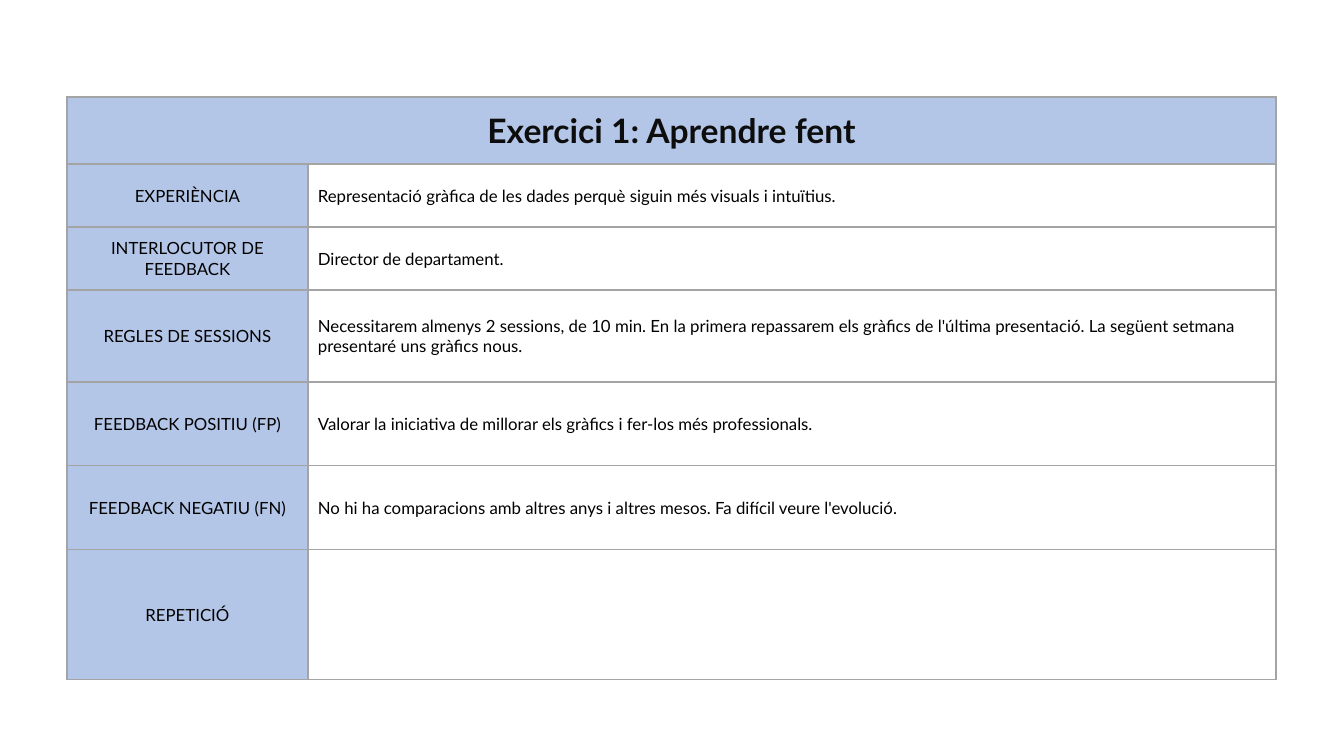
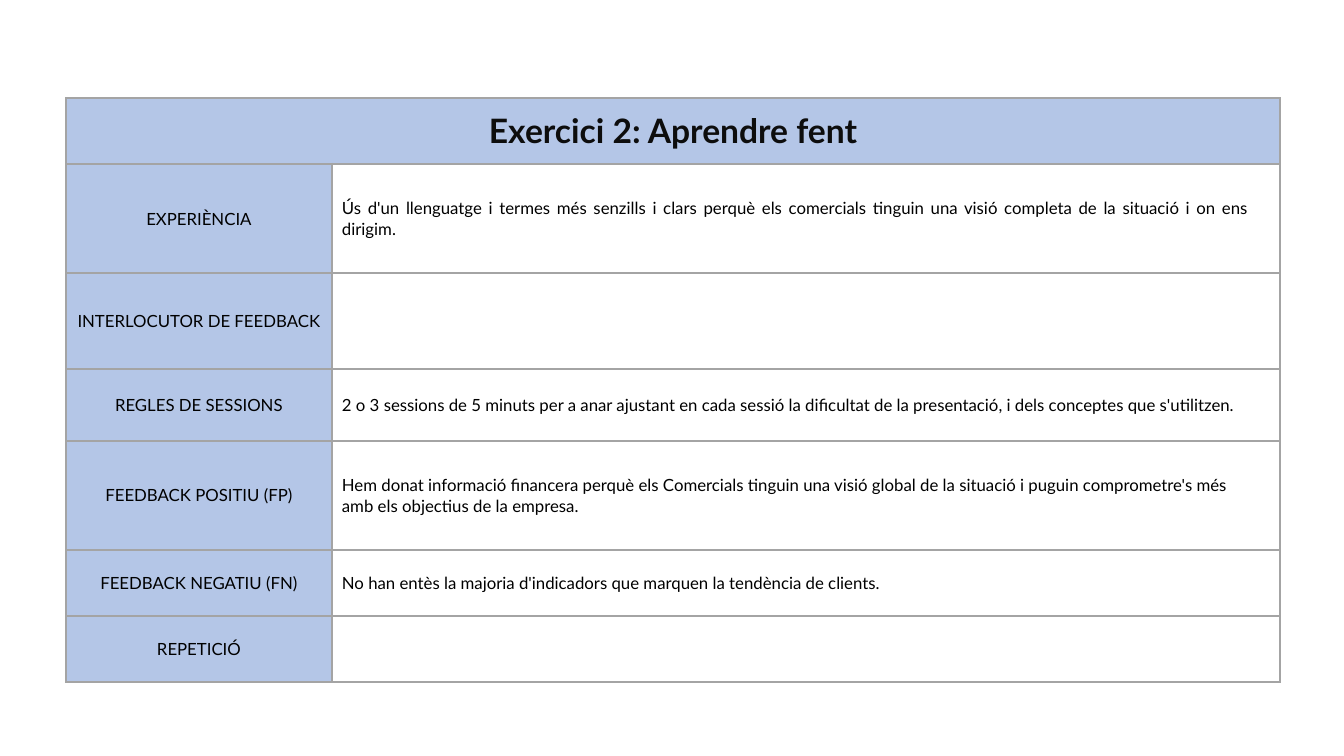
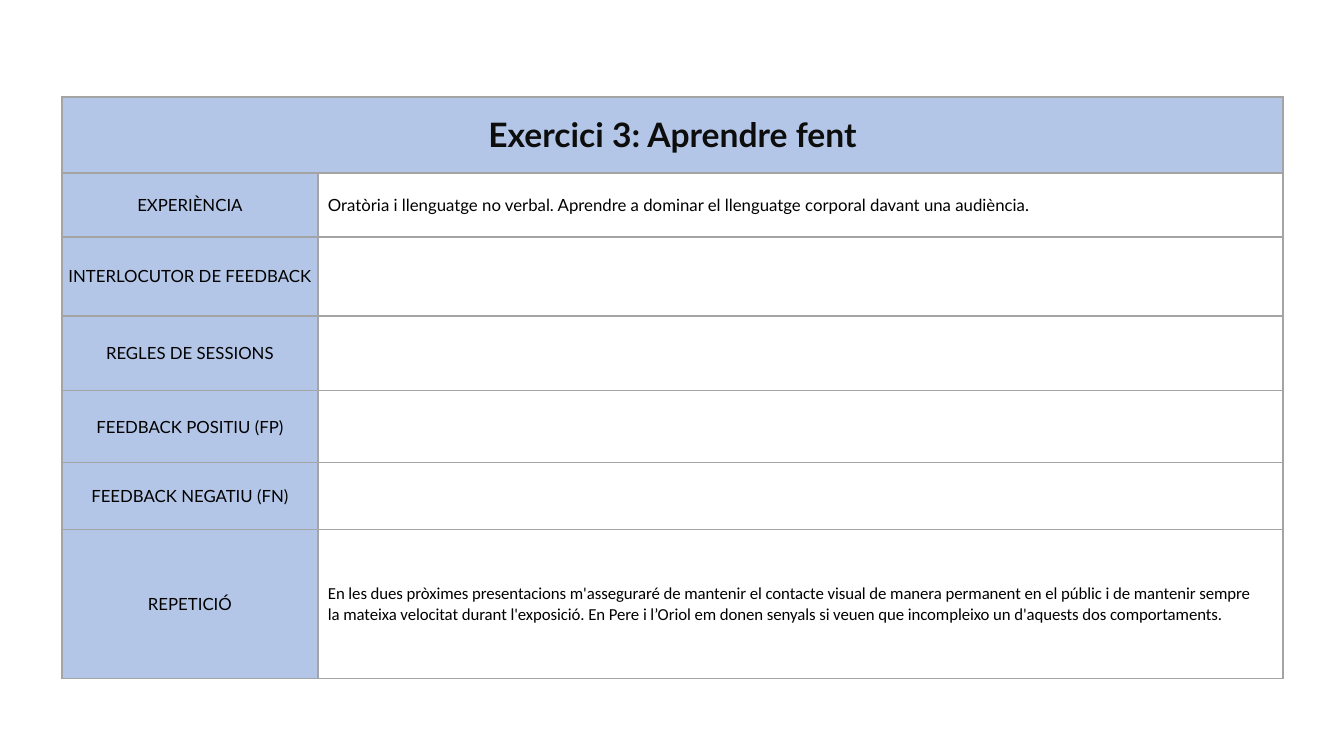
import pptx
import pptx.dml.color
import pptx.enum.text
import pptx.util
import lxml.etree

ALIGN = pptx.enum.text.PP_ALIGN
MIDDLE = pptx.enum.text.MSO_ANCHOR.MIDDLE
DRAWING_NS = "http://schemas.openxmlformats.org/drawingml/2006/main"
BAND, RULE, INK, HEADING_INK = "B4C6E7", "A4A4A4", "000000", "0D0D0D"
THIN, THICK = 1, 2.25

HEADING = {"name": "Lato", "size": 24, "bold": True, "color": HEADING_INK, "align": ALIGN.CENTER}
LABEL = {"name": "Lato", "size": 12, "bold": False, "color": INK, "align": ALIGN.CENTER}
ANSWER = {**LABEL, "align": ALIGN.LEFT}
JUSTIFIED = {**ANSWER, "align": ALIGN.JUSTIFY}
TIGHT = {**ANSWER, "name": "Calibri", "spacing": -5}

LABELS = [
    "EXPERIÈNCIA",
    "INTERLOCUTOR DE FEEDBACK",
    "REGLES DE SESSIONS",
    "FEEDBACK POSITIU (FP)",
    "FEEDBACK NEGATIU (FN)",
    "REPETICIÓ",
]

EXERCISES = [
    {
        "heading": "Exercici 1: Aprendre fent",
        "corner": (67, 97),
        "columns": (241, 968),
        "rows": (67, 63, 63, 92, 84, 84, 130),
        "inset": 20,
        "answers": [
            ("Representació gràfica de les dades perquè siguin més visuals i intuïtius.", ANSWER),
            ("Director de departament.", ANSWER),
            ("Necessitarem almenys 2 sessions, de 10 min. En la primera repassarem els gràfics de "
             "l'última presentació. La següent setmana presentaré uns gràfics nous.", ANSWER),
            ("Valorar la iniciativa de millorar els gràfics i fer-los més professionals.", ANSWER),
            ("No hi ha comparacions amb altres anys i altres mesos. Fa difícil veure l'evolució.", ANSWER),
            ("", ANSWER),
        ],
    },
    {
        "heading": "Exercici 2: Aprendre fent",
        "corner": (66, 98),
        "columns": (266, 948),
        "rows": (66, 109, 96, 72, 109, 66, 66),
        "inset": 31,
        "answers": [
            ("Ús d'un llenguatge i termes més senzills i clars perquè els comercials tinguin una visió "
             "completa de la situació i on ens dirigim.", JUSTIFIED),
            ("", ANSWER),
            ("2 o 3 sessions de 5 minuts per a anar ajustant en cada sessió la dificultat de la "
             "presentació, i dels conceptes que s'utilitzen.", ANSWER),
            ("Hem donat informació financera perquè els Comercials tinguin una visió global de la "
             "situació i puguin comprometre's més amb els objectius de la empresa.", ANSWER),
            ("No han entès la majoria d'indicadors que marquen la tendència de clients.", ANSWER),
            ("", ANSWER),
        ],
    },
    {
        "heading": "Exercici 3: Aprendre fent",
        "corner": (62, 97),
        "columns": (256, 965),
        "rows": (76, 64, 79, 75, 72, 67, 149),
        "inset": 20,
        "answers": [
            ("Oratòria i llenguatge no verbal. Aprendre a dominar el llenguatge corporal davant una "
             "audiència.", ANSWER),
            ("", ANSWER),
            ("", ANSWER),
            ("", ANSWER),
            ("", ANSWER),
            ("En les dues pròximes presentacions m'asseguraré de mantenir el contacte visual de manera "
             "permanent en el públic i de mantenir sempre la mateixa velocitat durant l'exposició. En "
             "Pere i l’Oriol em donen senyals si veuen que incompleixo un d'aquests dos "
             "comportaments.", TIGHT),
        ],
    },
]


def px(length):
    return pptx.util.Emu(round(length * 914400 / 100.8))


def color(hex_value):
    return pptx.dml.color.RGBColor.from_string(hex_value)


def write_text(cell, text, style):
    cell.text = text
    paragraph = cell.text_frame.paragraphs[0]
    paragraph.alignment = style["align"]
    for font in [paragraph.font] + [run.font for run in paragraph.runs]:
        values = {"name": style["name"], "size": pptx.util.Pt(style["size"]), "bold": style["bold"]}
        for attribute, value in values.items():
            setattr(font, attribute, value)
        font.color.rgb = color(style["color"])
    for run in paragraph.runs:
        if "spacing" in style:
            run._r.get_or_add_rPr().set("spc", str(style["spacing"]))


def draw_borders(cell, top, bottom):
    properties = cell._tc.get_or_add_tcPr()
    sides = {"lnL": THIN, "lnR": THIN, "lnT": top, "lnB": bottom}
    for position, (side, width) in enumerate(sides.items()):
        border = lxml.etree.Element(f"{{{DRAWING_NS}}}{side}", w=str(pptx.util.Pt(width)))
        fill = lxml.etree.SubElement(border, f"{{{DRAWING_NS}}}solidFill")
        lxml.etree.SubElement(fill, f"{{{DRAWING_NS}}}srgbClr", val=RULE)
        properties.insert(position, border)


def format_cell(cell, row, banded, left, right):
    values = {
        "margin_left": px(left),
        "margin_right": px(right),
        "margin_top": 0,
        "margin_bottom": 0,
        "vertical_anchor": MIDDLE,
    }
    for attribute, value in values.items():
        setattr(cell, attribute, value)
    if banded:
        cell.fill.solid()
        cell.fill.fore_color.rgb = color(BAND)
    else:
        cell.fill.background()
    draw_borders(cell, THICK if row == 1 else THIN, THICK if row == 0 else THIN)


def add_exercise(slide, exercise):
    left, top = exercise["corner"]
    columns, rows = exercise["columns"], exercise["rows"]
    frame = slide.shapes.add_table(
        len(rows), len(columns), px(left), px(top), px(sum(columns)), px(sum(rows)))
    grid = frame.table
    for flag in ("first_row", "horz_banding"):
        setattr(grid, flag, False)
    for column, width in zip(grid.columns, columns):
        column.width = px(width)
    for row, height in zip(grid.rows, rows):
        row.height = px(height)

    grid.cell(0, 0).merge(grid.cell(0, 1))
    for column in range(len(columns)):
        format_cell(grid.cell(0, column), 0, True, 0, 0)
    write_text(grid.cell(0, 0), exercise["heading"], HEADING)

    for row, (label, (answer, style)) in enumerate(zip(LABELS, exercise["answers"]), start=1):
        label_cell, answer_cell = grid.cell(row, 0), grid.cell(row, 1)
        format_cell(label_cell, row, True, 4, 4)
        format_cell(answer_cell, row, False, 10, exercise["inset"])
        write_text(label_cell, label, LABEL)
        write_text(answer_cell, answer, style)


def main():
    deck = pptx.Presentation()
    deck.slide_width, deck.slide_height = px(1344), px(756)
    for exercise in EXERCISES:
        add_exercise(deck.slides.add_slide(deck.slide_layouts[6]), exercise)
    deck.save("out.pptx")


if __name__ == "__main__":
    main()
